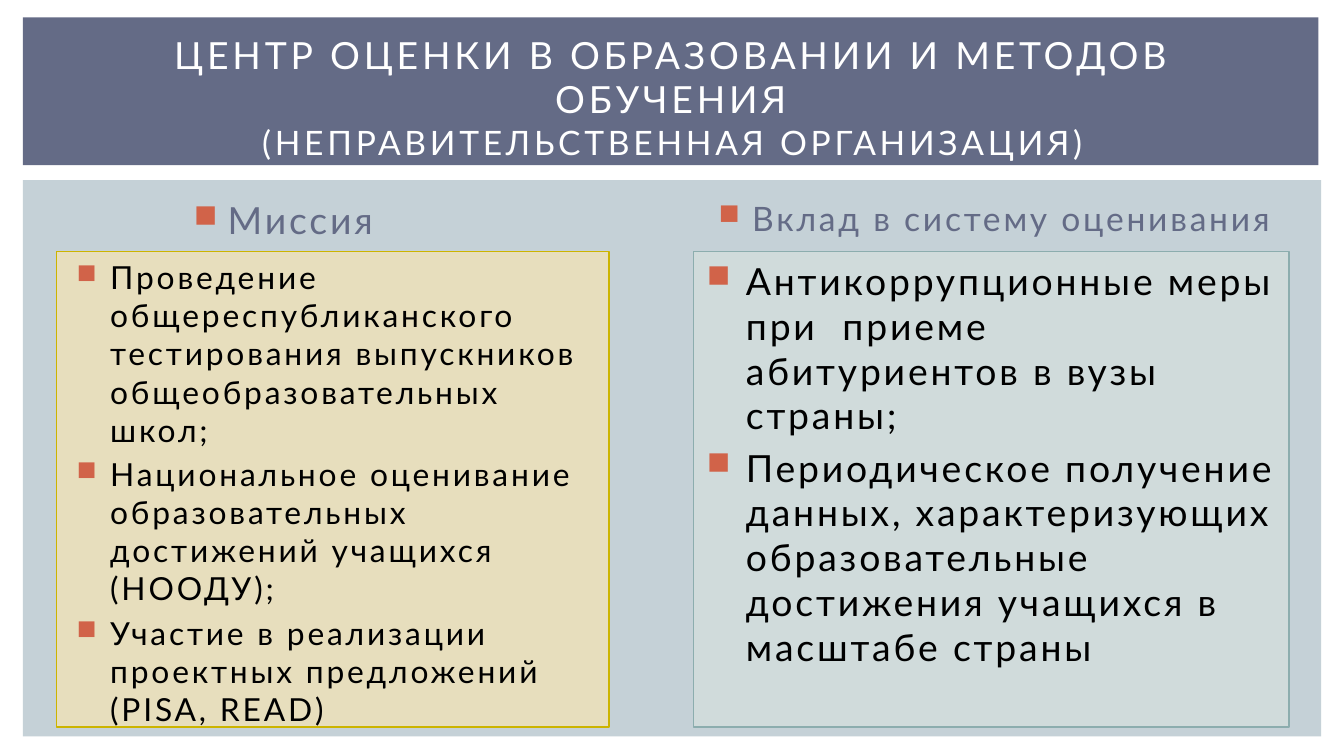
import pptx
import pptx.dml.color
import pptx.enum.shapes
import pptx.enum.text
import pptx.oxml
import pptx.oxml.ns
import pptx.util
from pptx.util import Inches

FONT = "Lato"
COLORS = {
    "white": "FFFFFF", "black": "000000", "slate": "646B86",
    "panel": "C5D1D7", "bullet": "D16349",
    "sand": "E7DEBD", "gold": "CCB400",
    "mist": "D0DBDB", "teal": "8CADAE",
}
# In Wingdings the letter n is a filled square
BULLET_XML = (
    '<a:spcBef {ns}><a:spcPct val="20000"/></a:spcBef>',
    '<a:buClr {ns}><a:srgbClr val="{color}"/></a:buClr>',
    '<a:buSzPct {ns} val="85000"/>',
    '<a:buFont {ns} typeface="Wingdings" pitchFamily="2" charset="2"/>',
    '<a:buChar {ns} char="n"/>',
)
COMPARISON_LAYOUT = 4


def rgb(name):
    return pptx.dml.color.RGBColor.from_string(COLORS[name])


def place(shape, box):
    shape.left, shape.top, shape.width, shape.height = (Inches(value) for value in box)


def style_paragraph(paragraph, size, color, spacing):
    paragraph.font.name = FONT
    paragraph.font.size = pptx.util.Pt(size)
    paragraph.font.bold = False
    paragraph.font.color.rgb = rgb(color)
    properties = paragraph._p.get_or_add_pPr()
    properties.get_or_add_defRPr().set("spc", str(round(spacing * 100)))


def add_bullet(paragraph, margin, hanging):
    properties = paragraph._p.get_or_add_pPr()
    properties.set("marL", str(Inches(margin)))
    properties.set("indent", str(-Inches(hanging)))
    namespace = pptx.oxml.ns.nsdecls("a")
    for index, template in enumerate(BULLET_XML):
        xml = template.format(ns=namespace, color=COLORS["bullet"])
        properties.insert(index, pptx.oxml.parse_xml(xml))


def add_panel(slide, box, color, depth):
    left, top, width, height = (Inches(value) for value in box)
    panel = slide.shapes.add_shape(
        pptx.enum.shapes.MSO_SHAPE.RECTANGLE, left, top, width, height)
    panel.shadow.inherit = False
    panel.fill.solid()
    panel.fill.fore_color.rgb = rgb(color)
    panel.line.fill.background()
    # Panels lie behind the placeholders
    slide.shapes._spTree.insert(2 + depth, panel._element)


def prepare_frame(shape, anchor):
    frame = shape.text_frame
    frame.word_wrap = True
    frame.auto_size = pptx.enum.text.MSO_AUTO_SIZE.NONE
    frame.vertical_anchor = anchor
    return frame


def fill_header(slide, box):
    left, top, width, height = box
    add_panel(slide, box, "slate", 1)
    title = slide.shapes.title
    place(title, (left + 0.25, top + 0.16, width - 0.47, height - 0.24))
    frame = prepare_frame(title, pptx.enum.text.MSO_ANCHOR.MIDDLE)
    paragraph = frame.paragraphs[0]
    paragraph.alignment = pptx.enum.text.PP_ALIGN.CENTER
    style_paragraph(paragraph, 20, "white", 2)
    paragraph.add_run().text = "ЦЕНТР ОЦЕНКИ В ОБРАЗОВАНИИ И МЕТОДОВ ОБУЧЕНИЯ"
    paragraph.add_line_break()
    subtitle = paragraph.add_run()
    subtitle.text = "(НЕПРАВИТЕЛЬСТВЕННАЯ ОРГАНИЗАЦИЯ)"
    subtitle.font.size = pptx.util.Pt(18)


def fill_heading(shape, box, text, size):
    place(shape, box)
    frame = prepare_frame(shape, pptx.enum.text.MSO_ANCHOR.TOP)
    frame.text = text
    paragraph = frame.paragraphs[0]
    paragraph.alignment = pptx.enum.text.PP_ALIGN.CENTER
    style_paragraph(paragraph, size, "slate", 1.5)
    add_bullet(paragraph, 0.3, 0.25)


def fill_list(shape, box, items, size, indent, fill, line):
    place(shape, box)
    shape.fill.solid()
    shape.fill.fore_color.rgb = rgb(fill)
    shape.line.color.rgb = rgb(line)
    shape.line.width = pptx.util.Pt(0.79)
    frame = prepare_frame(shape, pptx.enum.text.MSO_ANCHOR.TOP)
    frame.text = "\n".join(items)
    for paragraph in frame.paragraphs:
        style_paragraph(paragraph, size, "black", 1.5)
        add_bullet(paragraph, *indent)


def fill_columns(slide, box):
    left, top, width, height = box
    add_panel(slide, box, "panel", 0)
    holders = {holder.placeholder_format.idx: holder for holder in slide.placeholders}
    heading_top, list_top, list_height = top + 0.08, top + 0.53, height - 0.6

    # Mission
    fill_list(holders[2], (left + 0.25, list_top, 4.11, list_height), [
        "Проведение общереспубликанского тестирования выпускников "
        "общеобразовательных школ;",
        "Национальное оценивание образовательных достижений учащихся  (НООДУ);",
        "Участие в реализации проектных предложений (PISA, READ)",
    ], 17, (0.3, 0.25), "sand", "gold")
    fill_heading(holders[1], (left + 0.74, heading_top, 2.44, 0.47), "Миссия ", 20)

    # Contribution to assessment
    right = left + 4.99
    fill_list(holders[4], (right, list_top, 4.43, list_height), [
        "Антикоррупционные меры при  приеме абитуриентов в вузы страны;",
        "Периодическое получение данных, характеризующих образовательные "
        "достижения учащихся в масштабе страны",
    ], 20, (0.29, 0.29), "mist", "teal")
    fill_heading(holders[3], (right, heading_top, 4.43, 0.49),
                 "Вклад в систему оценивания", 18)


def main():
    presentation = pptx.Presentation()
    # Widescreen, 16:9
    presentation.slide_width = Inches(10)
    presentation.slide_height = Inches(10 * 9 / 16)
    slide = presentation.slides.add_slide(presentation.slide_layouts[COMPARISON_LAYOUT])
    fill_columns(slide, (0.17, 1.34, 9.66, 4.14))
    fill_header(slide, (0.17, 0.13, 9.64, 1.1))
    presentation.save("out.pptx")


if __name__ == "__main__":
    main()
